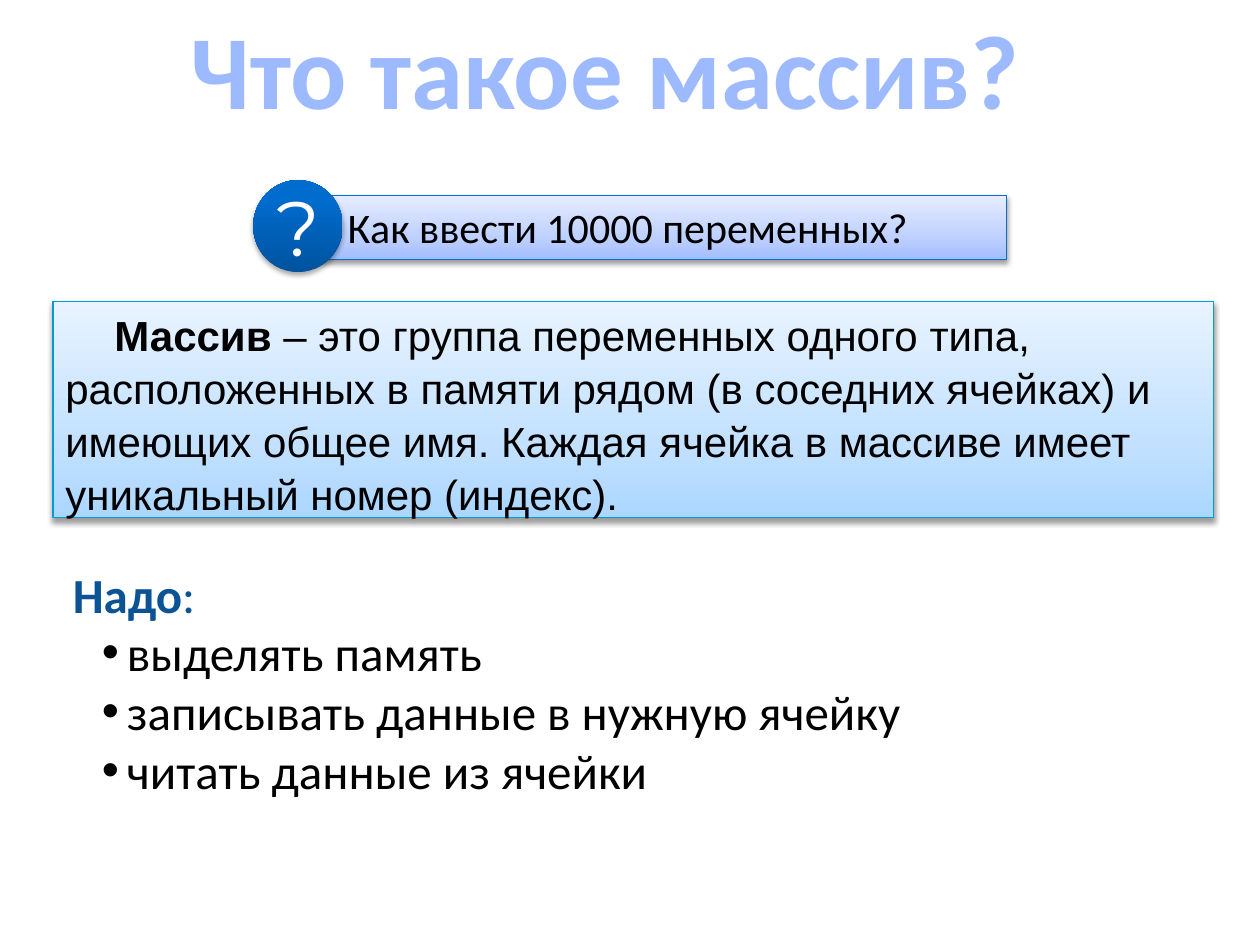
from dataclasses import dataclass

from lxml import etree
from pptx import Presentation
from pptx.dml.color import RGBColor
from pptx.enum.shapes import MSO_SHAPE
from pptx.enum.text import MSO_ANCHOR, MSO_AUTO_SIZE, PP_ALIGN
from pptx.oxml.ns import qn
from pptx.util import Inches, Pt

RECT, OVAL = MSO_SHAPE.RECTANGLE, MSO_SHAPE.OVAL
TOP, MIDDLE = MSO_ANCHOR.TOP, MSO_ANCHOR.MIDDLE
GROW, FIXED = MSO_AUTO_SIZE.SHAPE_TO_FIT_TEXT, MSO_AUTO_SIZE.NONE
LEFT, CENTER, JUSTIFY = PP_ALIGN.LEFT, PP_ALIGN.CENTER, PP_ALIGN.JUSTIFY


@dataclass(frozen=True)
class Theme:
    """Colours, gradients, fonts and type sizes of the slide."""
    title: str = "9EBAFF"
    heading: str = "0B5394"
    text: str = "000000"
    white: str = "FFFFFF"
    definition_line: str = "009AD4"
    question_line: str = "0A6DC6"
    definition_fill: tuple = ((0, "ABD6FF"), (35, "C3E1FF"), (100, "E8F3FF"))
    question_fill: tuple = ((0, "A3BDFF"), (35, "BED0FF"), (100, "E6EDFF"))
    badge_fill: tuple = ((0, "00539F"), (80, "006CCE"), (100, "006DCF"))
    font: str = "Calibri"
    definition_font: str = "Arial"
    badge_font: str = "Montserrat"
    title_size: int = 60
    badge_size: int = 44
    list_size: int = 28
    body_size: int = 24


T = Theme()


def box_inches(*box):
    """Return left, top, width and height as lengths."""
    return [Inches(v) for v in box]


def sub(parent, tag, **attrs):
    """Add a child element with attributes and return it."""
    return etree.SubElement(parent, qn(tag), {k: str(v) for k, v in attrs.items()})


def write(p, text, size=T.body_size, font=T.font, color=T.text, bold=False):
    """Add a formatted run to a paragraph."""
    r = p.add_run()
    r.text = text
    r.font.size, r.font.name, r.font.bold = Pt(size), font, bold
    r.font.color.rgb = RGBColor.from_string(color)


def frame(sp, anchor=TOP, align=LEFT, grow=True, wrap=True):
    """Set up a text frame and return its first paragraph."""
    tf = sp.text_frame
    tf.word_wrap, tf.vertical_anchor = wrap, anchor
    tf.auto_size = GROW if grow else FIXED
    tf.paragraphs[0].alignment = align
    return tf.paragraphs[0]


def indent(p, left, first):
    """Set the left margin and first-line indent of a paragraph."""
    pPr = p._p.get_or_add_pPr()
    pPr.set("marL", str(Inches(left)))
    pPr.set("indent", str(Inches(first)))
    return pPr


def gradient_shape(shapes, kind, box, stops, line=None, shadow_alpha=38, shadow_dist=1.6):
    """Add a shape with a vertical gradient and a soft shadow below it."""
    sp = shapes.add_shape(kind, *box_inches(*box))
    sp.fill.gradient()
    sp.fill.gradient_angle = 90
    gs_list = sp._element.spPr.find(".//" + qn("a:gsLst"))
    for gs in list(gs_list):
        gs_list.remove(gs)
    for pos, color in stops:
        sub(sub(gs_list, "a:gs", pos=pos * 1000), "a:srgbClr", val=color)
    if line:
        sp.line.color.rgb = RGBColor.from_string(line)
        sp.line.width = Pt(0.75)
    else:
        sp.line.fill.background()
    sp.shadow.inherit = False
    effects = sp._element.spPr.find(qn("a:effectLst"))
    shadow = sub(effects, "a:outerShdw", blurRad=Pt(3.1), dist=Pt(shadow_dist),
                 dir=90 * 60000, rotWithShape=0)
    sub(sub(shadow, "a:srgbClr", val="000000"), "a:alpha", val=shadow_alpha * 1000)
    return sp


def add_title(s, box):
    """Place the slide title."""
    p = frame(s.shapes.add_textbox(*box_inches(*box)), MIDDLE, CENTER, grow=False)
    write(p, "Что такое массив?", size=T.title_size, color=T.title, bold=True)


def add_definition(s, box):
    """Place the framed definition of an array."""
    p = frame(gradient_shape(s.shapes, RECT, box, T.definition_fill, T.definition_line))
    p.line_spacing = 1.05
    indent(p, 0, 0.39)
    write(p, "Массив", font=T.definition_font, bold=True)
    write(p, " – это группа переменных одного типа, расположенных в памяти рядом "
             "(в соседних ячейках) и имеющих общее имя. Каждая ячейка в массиве имеет "
             "уникальный номер (индекс).", font=T.definition_font)


def add_question(s, box):
    """Place the question bar with its round badge on the left."""
    left, top, width, height = box
    shapes = s.shapes.add_group_shape().shapes
    bar = (left + 0.51, top + 0.12, width - 0.51, 0.51)
    p = frame(gradient_shape(shapes, RECT, bar, T.question_fill, T.question_line))
    indent(p, 0.14, 0)
    write(p, "Как ввести 10000 переменных?")
    badge = gradient_shape(shapes, OVAL, (left, top, 0.71, height), T.badge_fill,
                           shadow_alpha=35, shadow_dist=1.8)
    p = frame(badge, MIDDLE, CENTER, grow=False, wrap=False)
    write(p, "?", size=T.badge_size, font=T.badge_font, color=T.white)


def add_heading(s, box):
    """Place the heading of the list."""
    p = frame(s.shapes.add_textbox(*box_inches(*box)), MIDDLE, JUSTIFY)
    write(p, "Надо", size=T.list_size, color=T.heading, bold=True)
    write(p, ":", size=T.list_size, color=T.heading)


def add_bullets(s, box, items):
    """Place the bulleted list."""
    sp = s.shapes.add_textbox(*box_inches(*box))
    p = frame(sp, align=JUSTIFY)
    for i, item in enumerate(items):
        if i:
            p = sp.text_frame.add_paragraph()
            p.alignment = JUSTIFY
        pPr = indent(p, 0.2, -0.2)
        sub(pPr, "a:buFont", typeface="Arial")
        sub(pPr, "a:buChar", char="•")
        write(p, item, size=T.list_size)


def main():
    """Build the slide and save it."""
    prs = Presentation()
    prs.slide_width, prs.slide_height = Inches(10), Inches(7.5)
    s = prs.slides.add_slide(prs.slide_layouts[6])
    add_title(s, (0, 0.23, 9.61, 0.61))
    add_definition(s, (0.42, 2.39, 9.21, 1.72))
    add_heading(s, (0.48, 4.43, 7.53, 0.57))
    add_question(s, (2.01, 1.43, 5.98, 0.73))
    add_bullets(s, (0.71, 4.89, 7.87, 1.52), (
        "выделять память", "записывать данные в нужную ячейку", "читать данные из ячейки"))
    prs.save("out.pptx")


if __name__ == "__main__":
    main()
